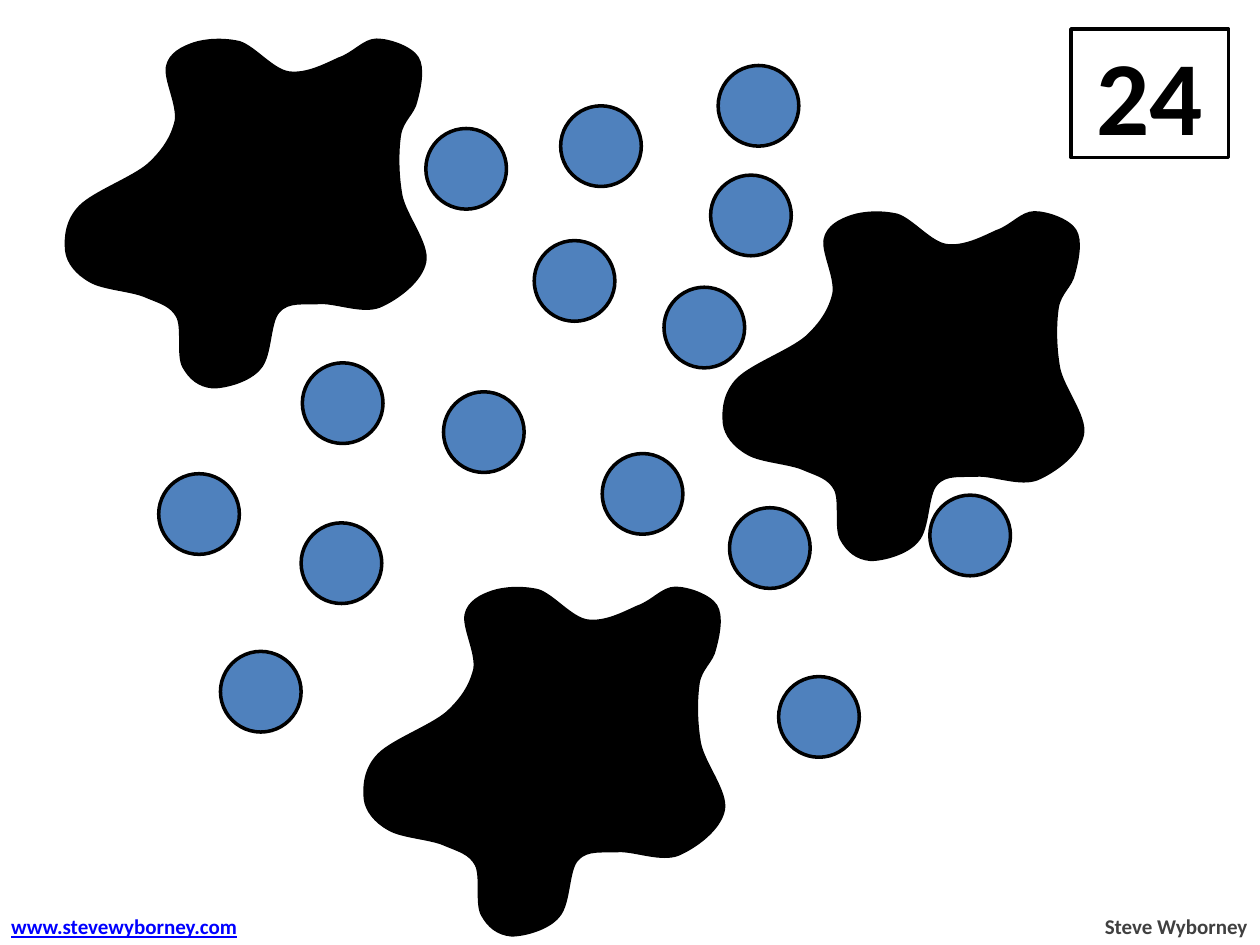
from dataclasses import dataclass

from lxml.etree import SubElement
from pptx import Presentation
from pptx.dml.color import RGBColor as RGB
from pptx.enum.shapes import MSO_SHAPE as Shape
from pptx.enum.text import MSO_ANCHOR as Anchor, PP_ALIGN as Align
from pptx.oxml.ns import qn
from pptx.util import Inches, Pt


@dataclass(frozen=True)
class Theme:
    font: str = "Calibri"
    black: RGB = RGB(0, 0, 0)
    white: RGB = RGB(255, 255, 255)
    blue: RGB = RGB(0x4F, 0x81, 0xBD)
    grey: RGB = RGB(0x40, 0x40, 0x40)
    link: RGB = RGB(0, 0, 255)
    big: int = 60
    small: int = 12
    line: int = 2


THEME = Theme()
DOT = 0.64
DOTS = [
    (5.7, 0.52), (4.45, 0.84), (3.38, 1.02), (5.64, 1.39), (4.24, 1.91),
    (5.27, 2.28), (2.4, 2.88), (3.52, 3.11), (4.78, 3.6), (1.26, 3.76),
    (7.38, 3.93), (5.79, 4.03), (2.39, 4.15), (1.75, 5.17), (6.18, 5.37),
]
# Shift of each blob from the first
BLOBS = [(0, 0), (5.22, 1.37), (2.37, 4.35)]
START = (0.72, 2.23)
# Each row is one curve: two control points, then the end point
CURVES = [
    [(0.61, 2.17), (0.54, 2.08), (0.53, 1.99)],
    [(0.52, 1.89), (0.53, 1.75), (0.64, 1.64)],
    [(0.75, 1.53), (1.05, 1.42), (1.18, 1.31)],
    [(1.3, 1.2), (1.37, 1.09), (1.4, 0.96)],
    [(1.42, 0.83), (1.31, 0.63), (1.33, 0.53)],
    [(1.35, 0.43), (1.45, 0.38), (1.54, 0.35)],
    [(1.63, 0.32), (1.77, 0.31), (1.9, 0.34)],
    [(2.02, 0.38), (2.16, 0.56), (2.29, 0.58)],
    [(2.43, 0.6), (2.58, 0.52), (2.69, 0.47)],
    [(2.81, 0.43), (2.89, 0.32), (2.99, 0.32)],
    [(3.09, 0.32), (3.26, 0.38), (3.31, 0.46)],
    [(3.36, 0.54), (3.33, 0.69), (3.3, 0.8)],
    [(3.28, 0.9), (3.19, 0.95), (3.17, 1.07)],
    [(3.15, 1.2), (3.15, 1.38), (3.18, 1.55)],
    [(3.21, 1.71), (3.4, 1.94), (3.37, 2.08)],
    [(3.34, 2.23), (3.15, 2.37), (3.01, 2.43)],
    [(2.88, 2.48), (2.68, 2.4), (2.55, 2.4)],
    [(2.41, 2.41), (2.29, 2.38), (2.21, 2.47)],
    [(2.13, 2.55), (2.15, 2.82), (2.06, 2.92)],
    [(1.98, 3.02), (1.79, 3.07), (1.69, 3.07)],
    [(1.58, 3.06), (1.51, 3), (1.46, 2.91)],
    [(1.41, 2.82), (1.46, 2.6), (1.41, 2.51)],
    [(1.36, 2.42), (1.28, 2.4), (1.16, 2.35)],
    [(1.05, 2.3), (0.82, 2.29), START],
]


def paint(shape, fill):
    shape.shadow.inherit = False
    shape.fill.solid()
    shape.fill.fore_color.rgb = fill
    shape.line.color.rgb = THEME.black
    shape.line.width = Pt(THEME.line)


def write(frame, text, size, color, align, under=False):
    para = frame.paragraphs[0]
    para.alignment = align
    run = para.add_run()
    run.text = text
    font = run.font
    font.name, font.size, font.bold = THEME.font, Pt(size), True
    font.underline = under
    font.color.rgb = color


def add_shape(slide, kind, box, fill):
    shape = slide.shapes.add_shape(kind, *map(Inches, box))
    paint(shape, fill)
    return shape


def add_label(slide, box, text, color, align, under=False):
    frame = slide.shapes.add_textbox(*map(Inches, box)).text_frame
    frame.word_wrap = False
    write(frame, text, THEME.small, color, align, under)


def add_blob(slide, dx, dy):
    """Lay the points as lines, then turn each three into one curve."""
    def place(point):
        return Inches(point[0] + dx), Inches(point[1] + dy)

    form = slide.shapes.build_freeform(*place(START))
    form.add_line_segments([place(p) for row in CURVES for p in row])
    blob = form.convert_to_shape()
    route = next(blob.element.iter(qn("a:path")))
    lines = route.findall(qn("a:lnTo"))
    end = route.find(qn("a:close"))
    route.remove(end)
    for i in range(0, len(lines), 3):
        curve = SubElement(route, qn("a:cubicBezTo"))
        for line in lines[i:i + 3]:
            curve.append(line[0])
            route.remove(line)
    route.append(end)
    paint(blob, THEME.black)


def main():
    deck = Presentation()
    deck.slide_width, deck.slide_height = Inches(10), Inches(7.5)
    slide = deck.slides.add_slide(deck.slide_layouts[6])

    count = add_shape(slide, Shape.RECTANGLE, (8.5, 0.23, 1.25, 1.02), THEME.white)
    count.text_frame.vertical_anchor = Anchor.MIDDLE
    write(count.text_frame, "24", THEME.big, THEME.black, Align.CENTER)

    add_label(slide, (8.66, 7.2, 1.34, 0.3), "Steve Wyborney",
              THEME.grey, Align.RIGHT)
    add_label(slide, (-0.01, 7.2, 2.05, 0.3), "www.stevewyborney.com",
              THEME.link, Align.LEFT, under=True)

    for x, y in DOTS:
        add_shape(slide, Shape.OVAL, (x, y, DOT, DOT), THEME.blue)
    for dx, dy in BLOBS:
        add_blob(slide, dx, dy)
    deck.save("out.pptx")


if __name__ == "__main__":
    main()
